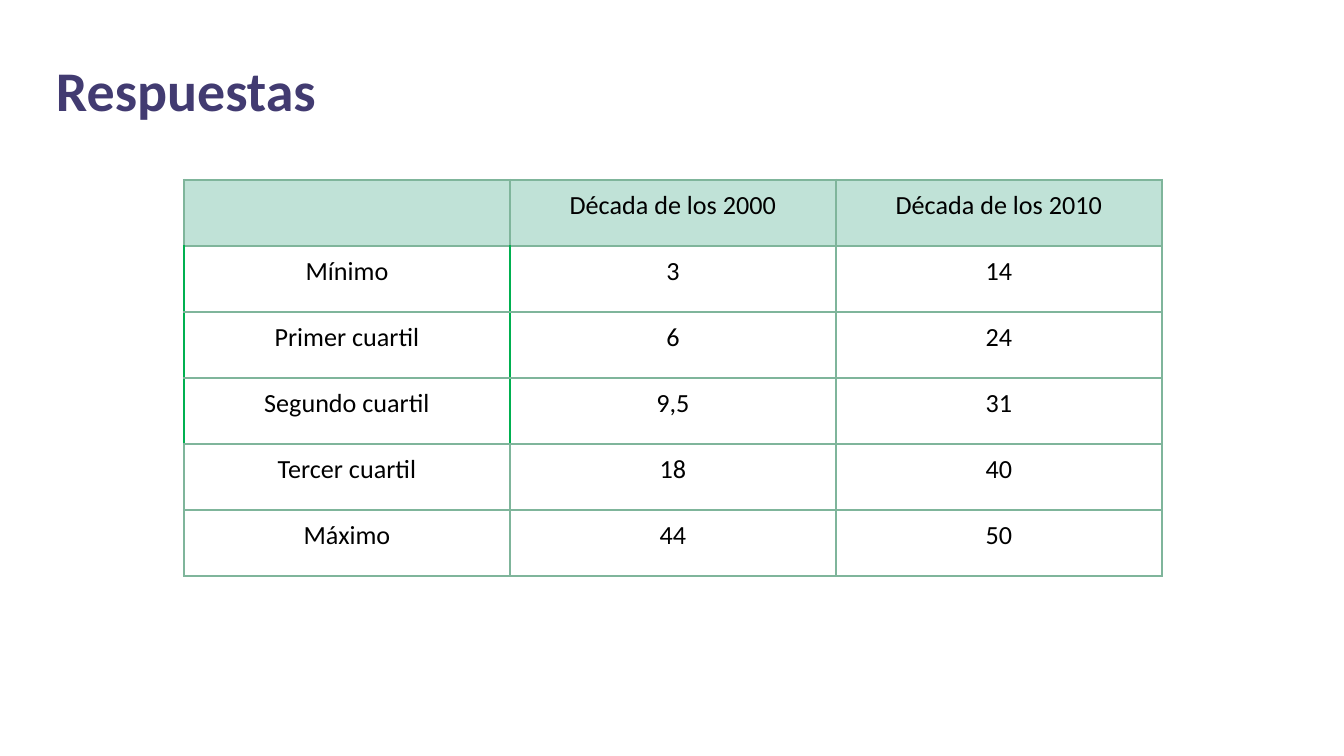
import pptx
import pptx.util
import pptx.dml.color
import pptx.enum.text
import pptx.oxml
import pptx.oxml.ns

PX = 9144000 / 1344
FONT = "Calibri"
COLORS = {
    "title": "423B71",
    "text": "000000",
    "header": "C0E2D7",
    "border": "7FB59B",
    "accent": "00B050",
}
ROWS = [
    ("", "Década de los 2000", "Década de los 2010"),
    ("Mínimo", "3", "14"),
    ("Primer cuartil", "6", "24"),
    ("Segundo cuartil", "9,5", "31"),
    ("Tercer cuartil", "18", "40"),
    ("Máximo", "44", "50"),
]
ACCENT_ROWS = (1, 2, 3)


def px(n):
    return pptx.util.Emu(round(n * PX))


def rgb(name):
    return pptx.dml.color.RGBColor.from_string(COLORS[name])


def add_run(p, text, size, color, bold=False):
    r = p.add_run()
    r.text = text
    r.font.name = FONT
    r.font.size = pptx.util.Pt(size)
    r.font.bold = bold
    r.font.color.rgb = rgb(color)


def set_title(s, text):
    sp = s.shapes.title
    sp.left, sp.top, sp.width, sp.height = px(46), px(51), px(900), px(78)
    tf = sp.text_frame
    tf.margin_left = tf.margin_right = px(10)
    tf.margin_top = tf.margin_bottom = px(5)
    tf.word_wrap = True
    tf.auto_size = pptx.enum.text.MSO_AUTO_SIZE.SHAPE_TO_FIT_TEXT
    tf.vertical_anchor = pptx.enum.text.MSO_ANCHOR.TOP
    p = tf.paragraphs[0]
    p.alignment = pptx.enum.text.PP_ALIGN.LEFT
    add_run(p, text, 30, "title", True)


def set_borders(cell, sides):
    tc_pr = cell._tc.get_or_add_tcPr()
    for side in "LRTB":
        tc_pr.append(pptx.oxml.parse_xml(
            f'<a:ln{side} {pptx.oxml.ns.nsdecls("a")} w="{pptx.util.Pt(1.5)}">'
            f'<a:solidFill><a:srgbClr val="{COLORS[sides.get(side, "border")]}"/>'
            f'</a:solidFill></a:ln{side}>'))


def accent_sides(row, col):
    if row not in ACCENT_ROWS:
        return {}
    return {side: "accent" for side in ("LR", "L", "")[col]}


def fill_cell(cell, text, header):
    cell.margin_left = cell.margin_right = px(10)
    cell.margin_top = cell.margin_bottom = px(10)
    if header:
        cell.fill.solid()
        cell.fill.fore_color.rgb = rgb("header")
    else:
        cell.fill.background()
    p = cell.text_frame.paragraphs[0]
    p.alignment = pptx.enum.text.PP_ALIGN.CENTER
    if text:
        add_run(p, text, 14, "text")


def add_quartile_table(s):
    n_rows, n_cols = len(ROWS), len(ROWS[0])
    table = s.shapes.add_table(n_rows, n_cols, px(184), px(180),
                               px(326 * n_cols), px(66 * n_rows)).table
    table.first_row = False
    table.horz_banding = False
    for column in table.columns:
        column.width = px(326)
    for row in table.rows:
        row.height = px(66)
    for i, values in enumerate(ROWS):
        for j, text in enumerate(values):
            cell = table.cell(i, j)
            set_borders(cell, accent_sides(i, j))
            fill_cell(cell, text, i == 0)


def main():
    prs = pptx.Presentation()
    prs.slide_width, prs.slide_height = px(1344), px(756)
    s = prs.slides.add_slide(prs.slide_layouts[5])
    set_title(s, "Respuestas")
    add_quartile_table(s)
    prs.save("out.pptx")


if __name__ == "__main__":
    main()
